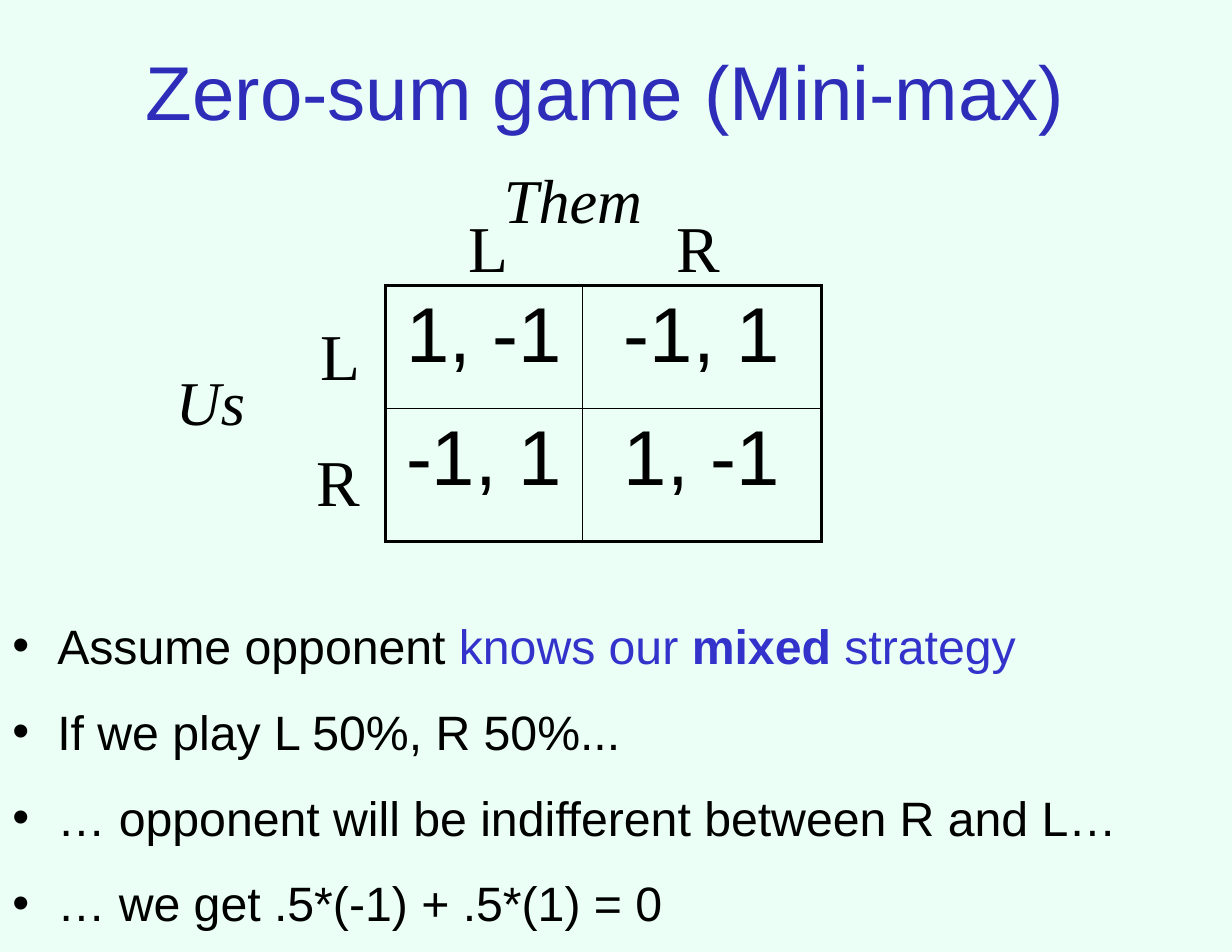
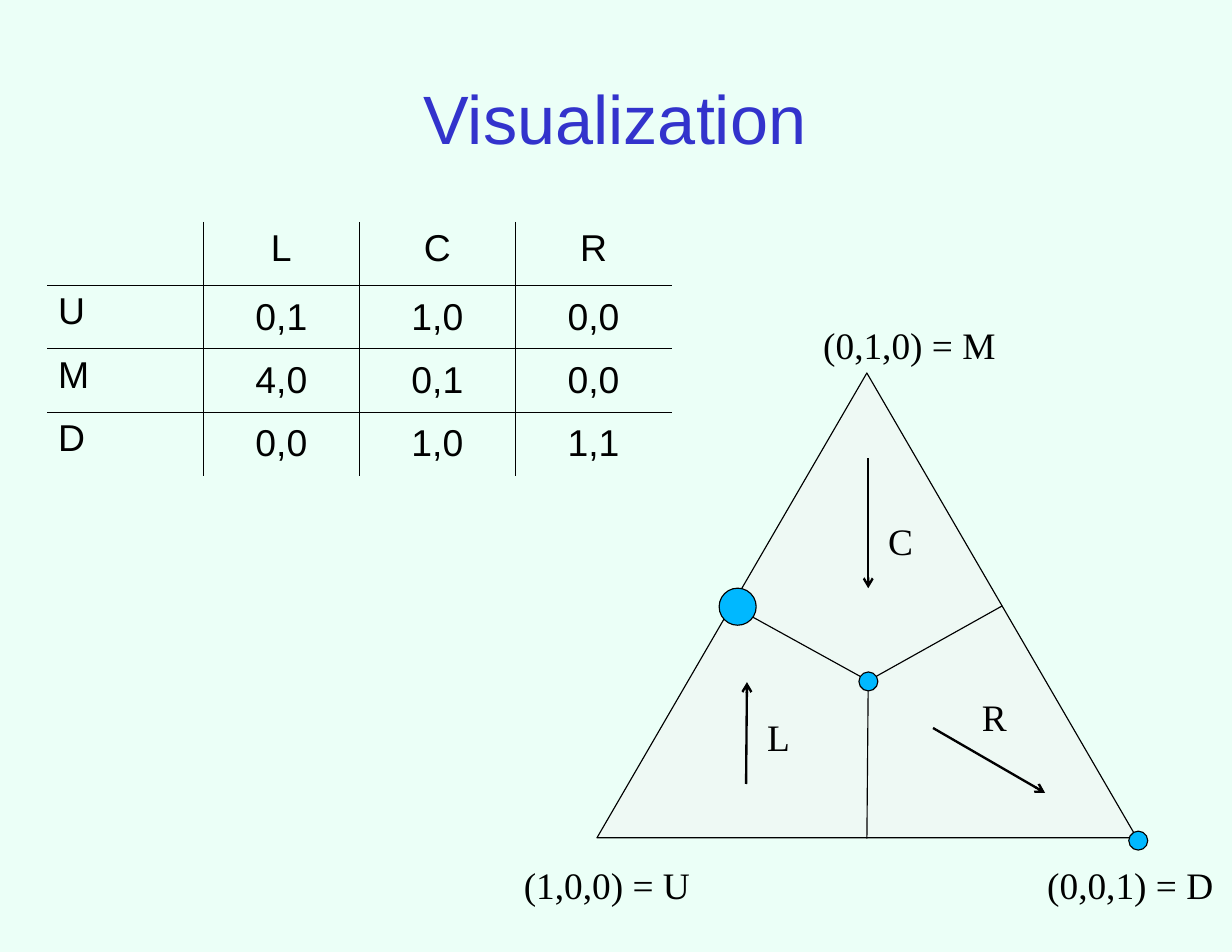
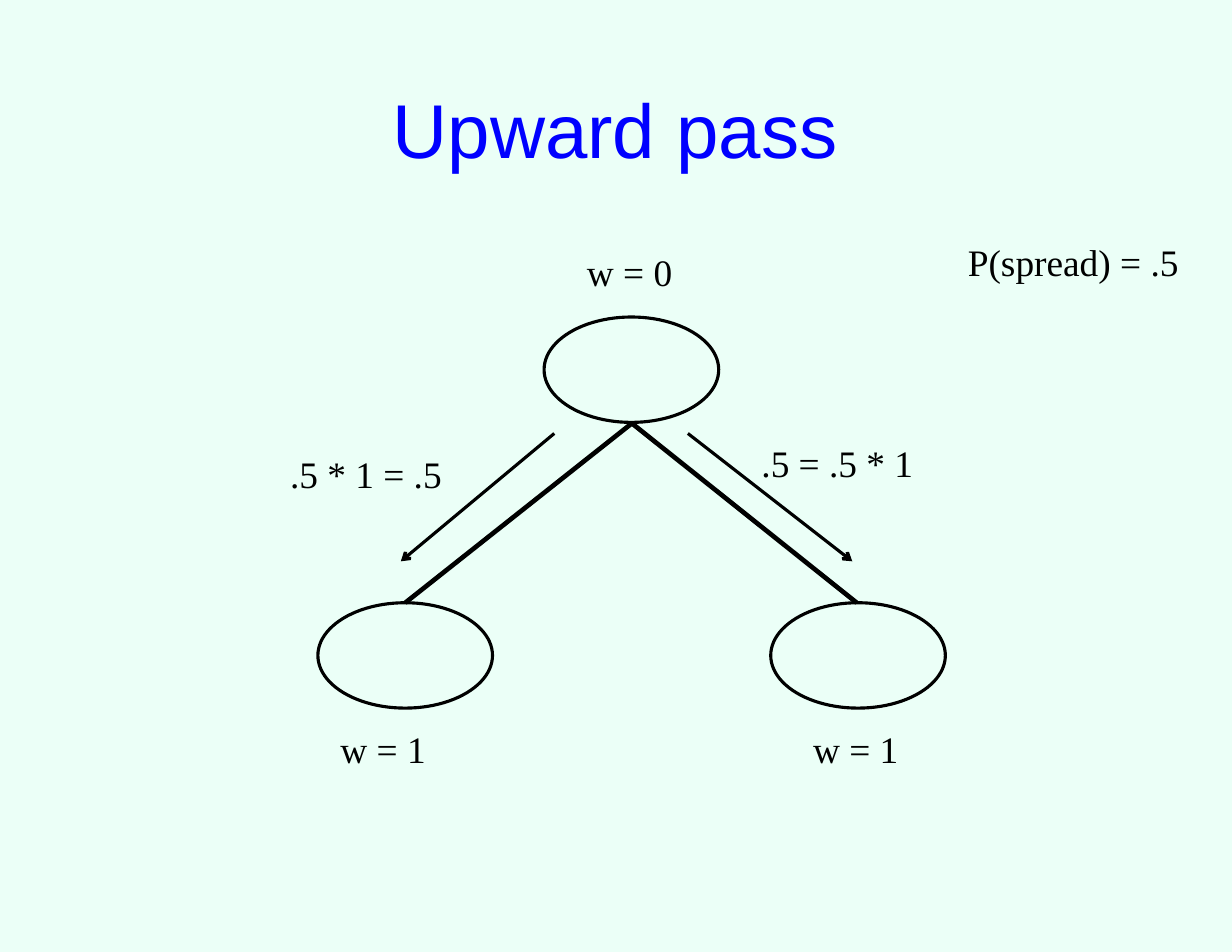
from lxml.etree import SubElement
from pptx import Presentation
from pptx.dml.color import RGBColor
from pptx.enum.shapes import MSO_CONNECTOR, MSO_SHAPE
from pptx.enum.text import MSO_ANCHOR, MSO_AUTO_SIZE, PP_ALIGN
from pptx.oxml.ns import qn
from pptx.util import Cm, Pt

LINE, OVAL, TRI = MSO_CONNECTOR.STRAIGHT, MSO_SHAPE.OVAL, MSO_SHAPE.ISOSCELES_TRIANGLE
MID, TOP = MSO_ANCHOR.MIDDLE, MSO_ANCHOR.TOP
MIDST, LEFT = PP_ALIGN.CENTER, PP_ALIGN.LEFT
FIT, FIXED = MSO_AUTO_SIZE.SHAPE_TO_FIT_TEXT, MSO_AUTO_SIZE.NONE
SANS, SERIF = "Arial", "Times New Roman"
MINT, BLACK, BLUE, SKY, PALE = "EBFFF7", "000000", "3333CC", "00B8FF", "EEF9F4"
WIDE, SLIM = (Cm(0.28), Cm(0.15)), (Cm(0.25), Cm(0.13))
PADS = (WIDE, SLIM, WIDE)


def paint(fill, hue):
    fill.solid()
    fill.fore_color.rgb = RGBColor.from_string(hue)


def style(box, frame, size, face, hue=BLACK, pad=WIDE):
    """Set the insets of a frame or cell and the font of all its runs."""
    box.margin_left = box.margin_right = pad[0]
    box.margin_top = box.margin_bottom = pad[1]
    for para in frame.paragraphs:
        for run in para.runs:
            run.font.size, run.font.name = Pt(size), face
            paint(run.font.fill, hue)


prs = Presentation()
prs.slide_width, prs.slide_height = Cm(27.94), Cm(21.59)
paint(prs.slide_master.background.fill, MINT)

# Titles: text, left, top, size, colour
titles = [
    ("Zero-sum game (Mini-max)", 1.17, 0, 49, "2D2DB9"),
    ("Visualization", 1.4, 0.64, 44, BLUE),
    ("Upward pass", 1.4, 0.86, 49, "0000FF"),
]
slides = []
for text, x, y, size, hue in titles:
    slide = prs.slides.add_slide(prs.slide_layouts[5])
    slides.append(slide)
    title = slide.shapes.title
    title.left, title.top, title.width, title.height = Cm(x), Cm(y), Cm(25.1), Cm(3.58)
    frame = title.text_frame
    frame.text = text
    frame.auto_size, frame.vertical_anchor = FIXED, MID
    frame.paragraphs[0].alignment = MIDST
    frame.paragraphs[0].line_spacing = 1.24
    style(frame, frame, size, SANS, hue)

# Bullets: each point is a list of text, colour, bold
points = [
    [("Assume opponent ", BLACK, False), ("knows our ", BLUE, False),
     ("mixed", BLUE, True), (" strategy", BLUE, False)],
    [("If we play L 50%, R 50%...", BLACK, False)],
    [("… opponent will be indifferent between R and L…", BLACK, False)],
    [("… we get .5*(-1) + .5*(1) = 0", BLACK, False)],
]
frame = slides[0].shapes.add_textbox(0, Cm(13.51), Cm(27), Cm(8.08)).text_frame
frame.word_wrap = True
for i, point in enumerate(points):
    para = frame.add_paragraph() if i else frame.paragraphs[0]
    para.line_spacing, para.space_before = 1.24, Pt(9)
    for text, hue, bold in point:
        para.add_run().text = text
    props = para._p.get_or_add_pPr()
    props.set("marL", str(Cm(1.02)))
    props.set("indent", str(-Cm(1.02)))
    tone = SubElement(props, qn("a:buClr"))
    SubElement(tone, qn("a:srgbClr"), val=BLACK)
    SubElement(props, qn("a:buFont"), typeface=SANS)
    SubElement(props, qn("a:buChar"), char="•")
style(frame, frame, 31, SANS)
for para, point in zip(frame.paragraphs, points):
    for run, (text, hue, bold) in zip(para.runs, point):
        run.font.bold = bold
        paint(run.font.fill, hue)

# Tables: slide, left, top, widths, heights, size, outer border, cells
tables = [
    (0, 8.74, 6.48, [4.47, 5.41], [2.79, 3], 50, 2.25,
     [["1, -1", "-1, 1"], ["-1, 1", "1, -1"]]),
    (1, 1.07, 5.03, [3.54] * 4, [1.44] * 4, 24, 0,
     [["", "L", "C", "R"], ["U", "0,1", "1,0", "0,0"],
      ["M", "4,0", "0,1", "0,0"], ["D", "0,0", "1,0", "1,1"]]),
]
for n, x, y, wides, highs, size, outer, cells in tables:
    table = slides[n].shapes.add_table(
        len(highs), len(wides), Cm(x), Cm(y), Cm(sum(wides)), Cm(sum(highs))).table
    table.first_row = table.horz_banding = False
    for col, wide in zip(table.columns, wides):
        col.width = Cm(wide)
    for r, high in enumerate(highs):
        table.rows[r].height = Cm(high)
        for c, text in enumerate(cells[r]):
            cell = table.cell(r, c)
            cell.text_frame.text = text
            style(cell, cell.text_frame, size, SANS, pad=PADS[n])
            head = n == 1 and c == 0
            cell.text_frame.paragraphs[0].alignment = LEFT if head else MIDST
            cell.vertical_anchor = MID if n == 1 and r and c else TOP
            edges = {"L": c == 0, "R": c == len(wides) - 1,
                     "T": r == 0, "B": r == len(highs) - 1}
            for side, edge in edges.items():
                width = outer if edge else 1
                rule = SubElement(cell._tc.get_or_add_tcPr(), qn(f"a:ln{side}"),
                                  w=str(Pt(width)))
                if width:
                    fill = SubElement(rule, qn("a:solidFill"))
                    SubElement(fill, qn("a:srgbClr"), val=BLACK)
                else:
                    SubElement(rule, qn("a:noFill"))
            cell.fill.background()

# Drawing, back to front: slide, kind, place, line width, fill or arrow end
# A line's place is its two ends, a shape's is left, top, width, height
hub, node = (19.69, 15.44), (3.96, 2.39)
root = (14.33, 9.6)
marks = [
    (1, TRI, (13.54, 8.46, 12.24, 10.54), 0.75, PALE),
    (1, LINE, (*hub, 16.61, 13.74), 0.75, None),
    (1, LINE, (22.73, 13.74, *hub), 0.75, None),
    (1, LINE, (*hub, 19.66, 19.02), 0.75, None),
    (1, LINE, (16.92, 17.78, 16.94, 15.47), 1.5, "tail"),
    (1, LINE, (19.69, 10.39, 19.69, 13.34), 1.5, "tail"),
    (1, LINE, (21.16, 16.51, 23.7, 17.98), 1.5, "tail"),
    (1, OVAL, (19.48, 15.24, 0.43, 0.43), 0.75, SKY),
    (1, OVAL, (25.6, 18.85, 0.43, 0.43), 0.75, SKY),
    (1, OVAL, (16.31, 13.34, 0.84, 0.84), 0.75, SKY),
    (2, OVAL, (7.21, 13.67, *node), 2, None),
    (2, OVAL, (17.48, 13.67, *node), 2, None),
    (2, OVAL, (12.34, 7.19, *node), 2, None),
    (2, LINE, (9.19, 13.67, *root), 3, None),
    (2, LINE, (*root, 19.43, 13.67), 3, None),
    (2, LINE, (9.09, 12.73, 12.57, 9.83), 2, "head"),
    (2, LINE, (19.33, 12.73, 15.6, 9.83), 2, "head"),
]
for n, kind, place, width, extra in marks:
    shapes = slides[n].shapes
    add = shapes.add_connector if kind is LINE else shapes.add_shape
    mark = add(kind, *(Cm(v) for v in place))
    mark.line.width = Pt(width)
    paint(mark.line.fill, BLACK)
    if kind is LINE:
        if extra:
            SubElement(mark.line._get_or_add_ln(), qn(f"a:{extra}End"), type="arrow")
        SubElement(mark._element.spPr, qn("a:effectLst"))
    else:
        mark.shadow.inherit = False
        if extra:
            paint(mark.fill, extra)
        else:
            mark.fill.background()

# Labels: slide, left, top, width, size, text
labels = [
    (0, 6.99, 6.99, 1.47, 42, "L"),
    (0, 6.91, 9.86, 1.57, 42, "R"),
    (0, 10.34, 4.55, 1.47, 42, "L"),
    (0, 15.06, 4.55, 1.57, 42, "R"),
    (0, 3.71, 8.1, 2.16, 40, "Us"),
    (0, 11.15, 3.51, 3.73, 40, "Them"),
    (1, 11.63, 19.25, 4.42, 24, "(1,0,0) = U"),
    (1, 18.42, 6.99, 4.6, 24, "(0,1,0) = M"),
    (1, 23.5, 19.25, 4.42, 24, "(0,0,1) = D"),
    (1, 17.15, 15.88, 1.04, 24, "L"),
    (1, 19.89, 11.43, 1.09, 24, "C"),
    (1, 22.02, 15.44, 1.09, 24, "R"),
    (2, 7.44, 16.31, 3.25, 24, "w = 1"),
    (2, 18.16, 16.31, 3.25, 24, "w = 1"),
    (2, 21.67, 5.28, 5.36, 24, "P(spread) = .5"),
    (2, 6.3, 10.08, 4.9, 24, ".5 * 1 = .5"),
    (2, 16.99, 9.83, 4.9, 24, ".5 = .5 * 1"),
    (2, 13.03, 5.51, 2.57, 24, "w = 0"),
]
highs, gaps = (2.05, 1.4, 1.32), (1.0, 1.18, 1.0)
for n, x, y, wide, size, text in labels:
    frame = slides[n].shapes.add_textbox(Cm(x), Cm(y), Cm(wide), Cm(highs[n])).text_frame
    frame.text = text
    frame.word_wrap, frame.auto_size = n == 2, FIT
    frame.paragraphs[0].line_spacing = gaps[n]
    style(frame, frame, size, SERIF, pad=PADS[n])
    frame.paragraphs[0].runs[0].font.italic = size == 40

prs.save("out.pptx")
